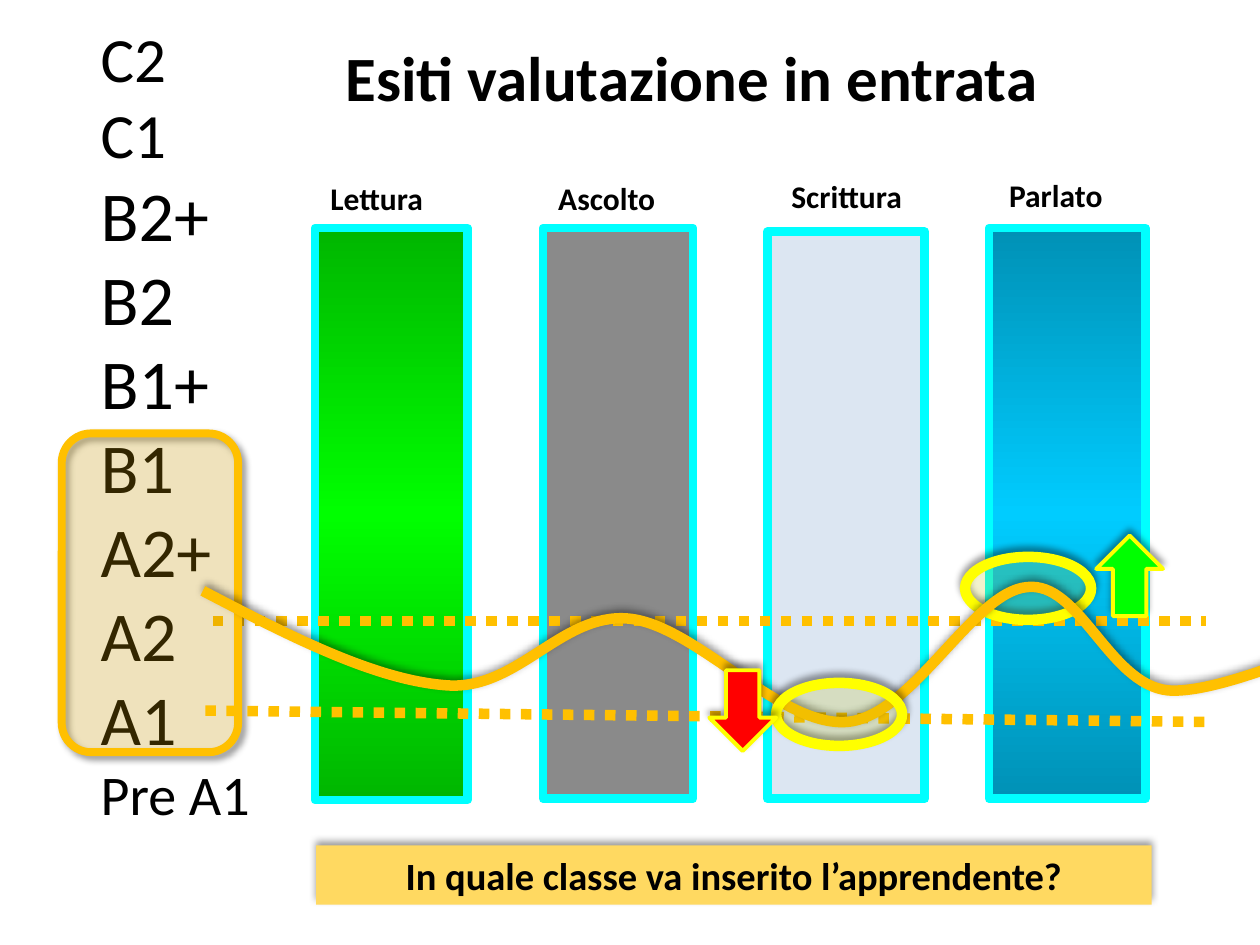
"""Build the slide that compares entry assessment results across four skills."""
from dataclasses import dataclass
from typing import Optional

from lxml import etree
from pptx import Presentation
from pptx import util as u
from pptx.dml.color import RGBColor
from pptx.enum import dml, shapes, text
from pptx.oxml import parse_xml
from pptx.oxml.ns import nsdecls, qn

PX = 9144
SHAPE = shapes.MSO_SHAPE


@dataclass(frozen=True)
class Theme:
    font: str = "Calibri"
    ink: str = "000000"
    cyan: str = "00FFFF"
    amber: str = "FFC000"
    yellow: str = "FFFF00"
    green: str = "00FF00"
    red: str = "FF0000"
    sky: str = "00CCFF"
    pale: str = "DCE6F2"
    sand: str = "FFD961"
    title_size: int = 36
    label_size: int = 18
    question_size: int = 22


@dataclass(frozen=True)
class Box:
    left: int
    top: int
    width: int
    height: int

    def emu(self) -> list[int]:
        return [value * PX for value in (self.left, self.top, self.width, self.height)]


@dataclass(frozen=True)
class Figure:
    kind: int
    box: Box
    fill: str
    line: Optional[str] = None
    weight: float = 0
    opacity: int = 100
    gradient: bool = False
    shadow_angle: Optional[int] = None
    rotation: int = 0


@dataclass(frozen=True)
class Label:
    box: Box
    lines: tuple[tuple[str, int], ...]
    bold: bool = True
    centred: bool = True
    wrap: bool = False


THEME = Theme()
TITLE = Label(Box(216, 26, 666, 71), (("Esiti valutazione in entrata", THEME.title_size),), wrap=True)
QUESTION = Label(Box(251, 671, 663, 47),
                 (("In quale classe va inserito l’apprendente?", THEME.question_size),), wrap=True)
LEVELS = Label(
    Box(70, 11, 161, 670),
    (("C2", 36), ("C1", 36),
     *((level, 40) for level in ("B2+", "B2", "B1+", "B1", "A2+", "A2", "A1")),
     ("Pre A1", 32)),
    bold=False, centred=False)
SKILLS = [
    Label(box, ((name, THEME.label_size),))
    for name, box in (("Ascolto", Box(425, 137, 113, 40)), ("Lettura", Box(246, 137, 106, 40)),
                      ("Parlato", Box(785, 135, 106, 40)), ("Scrittura", Box(610, 136, 124, 40)))]
COLUMNS = [
    Figure(SHAPE.RECTANGLE, Box(250, 181, 121, 454), THEME.green, THEME.cyan, 5, gradient=True),
    Figure(SHAPE.RECTANGLE, Box(785, 181, 124, 453), THEME.sky, THEME.cyan, 5, gradient=True),
    Figure(SHAPE.RECTANGLE, Box(609, 184, 125, 450), THEME.pale, THEME.cyan, 5),
    Figure(SHAPE.RECTANGLE, Box(431, 181, 119, 453), THEME.ink, THEME.cyan, 5, opacity=46)]
CLASS_RANGE = Figure(SHAPE.ROUNDED_RECTANGLE, Box(49, 344, 140, 253), THEME.amber, THEME.amber, 4.5,
                     opacity=20, shadow_angle=45)
HIGH_RING, LOW_RING = [
    Figure(SHAPE.OVAL, Box(left, top, 100, 50), THEME.yellow, THEME.yellow, 6,
           opacity=15, shadow_angle=270) for left, top in ((766, 442), (616, 542))]
UP_ARROW, DOWN_ARROW = [
    Figure(SHAPE.DOWN_ARROW, Box(left, top, 53, 64), colour, THEME.yellow, 2.25,
           shadow_angle=270, rotation=rotation)
    for left, top, colour, rotation in ((870, 425, THEME.green, 180), (563, 532, THEME.red, 0))]
BAND = Figure(SHAPE.RECTANGLE, QUESTION.box, THEME.sand, shadow_angle=270)
UPPER_LIMIT = (169, 493, 957, 493)
LOWER_LIMIT = (163, 564, 957, 573)
CURVE_START = (161, 469)
CURVE = [
    ((230, 505), (298, 540), (355, 544)), ((411, 548), (446, 486), (499, 491)),
    ((552, 496), (619, 577), (672, 573)), ((724, 569), (772, 470), (815, 466)),
    ((857, 461), (880, 543), (927, 548)), ((975, 552), (1098, 492), (1098, 492))]


def set_shadow(shape, angle: Optional[int]) -> None:
    """Replace the inherited shadow with none or with a soft black one."""
    shape.shadow.inherit = False
    if angle is not None:
        effects = shape._element.spPr.find(qn("a:effectLst"))
        effects.append(parse_xml(
            f'<a:outerShdw {nsdecls("a")} blurRad="{u.Pt(4)}" dist="{u.Pt(3)}" '
            f'dir="{angle * 60000}" algn="ctr" rotWithShape="0">'
            f'<a:srgbClr val="{THEME.ink}"><a:alpha val="40000"/></a:srgbClr></a:outerShdw>'))


def set_gradient(shape, colour: str) -> None:
    """Fill a shape from dark to full colour and back to dark, downwards."""
    dark = f'<a:srgbClr val="{colour}"><a:shade val="46275"/></a:srgbClr>'
    stops = ((0, dark), (50000, f'<a:srgbClr val="{colour}"/>'), (100000, dark))
    marks = "".join(f'<a:gs pos="{position}">{tone}</a:gs>' for position, tone in stops)
    properties = shape._element.spPr
    properties.find(qn("a:prstGeom")).addnext(parse_xml(
        f'<a:gradFill {nsdecls("a")} rotWithShape="1"><a:gsLst>{marks}</a:gsLst>'
        '<a:lin ang="5400000" scaled="1"/></a:gradFill>'))


def set_line(line, colour: str, weight: float) -> None:
    """Give a line its colour and weight."""
    line.color.rgb = RGBColor.from_string(colour)
    line.width = u.Pt(weight)


def draw_figure(slide, figure: Figure):
    """Draw a preset shape and return it."""
    shape = slide.shapes.add_shape(figure.kind, *figure.box.emu())
    shape.rotation = figure.rotation
    if figure.gradient:
        set_gradient(shape, figure.fill)
    else:
        shape.fill.solid()
        shape.fill.fore_color.rgb = RGBColor.from_string(figure.fill)
    if figure.opacity < 100:
        colour = shape._element.spPr.find(qn("a:solidFill"))[0]
        etree.SubElement(colour, qn("a:alpha"), val=str(figure.opacity * 1000))
    if figure.line:
        set_line(shape.line, figure.line, figure.weight)
    else:
        shape.line.fill.background()
    set_shadow(shape, figure.shadow_angle)
    return shape


def write_label(shape, label: Label) -> None:
    """Write the lines of a label into a shape."""
    frame = shape.text_frame
    frame.text = "\n".join(words for words, _ in label.lines)
    frame.word_wrap = label.wrap
    frame.auto_size = text.MSO_AUTO_SIZE.SHAPE_TO_FIT_TEXT
    frame.vertical_anchor = text.MSO_ANCHOR.TOP
    for paragraph, (_, size) in zip(frame.paragraphs, label.lines):
        paragraph.alignment = text.PP_ALIGN.CENTER if label.centred else text.PP_ALIGN.LEFT
        font = paragraph.runs[0].font
        font.name, font.size, font.bold = THEME.font, u.Pt(size), label.bold
        font.color.rgb = RGBColor.from_string(THEME.ink)


def draw_label(slide, label: Label) -> None:
    """Draw a label in its own text box."""
    write_label(slide.shapes.add_textbox(*label.box.emu()), label)


def draw_limit(slide, ends: tuple[int, int, int, int]) -> None:
    """Draw a dotted level limit."""
    connector = slide.shapes.add_connector(
        shapes.MSO_CONNECTOR.STRAIGHT, *(value * PX for value in ends))
    set_line(connector.line, THEME.amber, 6)
    connector.line.dash_style = dml.MSO_LINE.ROUND_DOT
    etree.SubElement(connector._element.spPr, qn("a:effectLst"))


def draw_curve(slide) -> None:
    """Draw the learner profile as a chain of cubic curves."""
    builder = slide.shapes.build_freeform(*CURVE_START, scale=PX)
    builder.add_line_segments([segment[-1] for segment in CURVE], close=False)
    shape = builder.convert_to_shape()
    outline = next(shape._element.iter(qn("a:path")))
    left = min(CURVE_START[0], *(segment[-1][0] for segment in CURVE))
    top = min(CURVE_START[1], *(segment[-1][1] for segment in CURVE))
    unit = int(outline.get("w")) / (CURVE[-1][-1][0] - left)
    for straight, segment in zip(outline.findall(qn("a:lnTo")), CURVE):
        bend = etree.Element(qn("a:cubicBezTo"))
        for x, y in segment:
            etree.SubElement(bend, qn("a:pt"), x=str(round((x - left) * unit)),
                             y=str(round((y - top) * unit)))
        outline.replace(straight, bend)
    shape.fill.background()
    set_line(shape.line, THEME.amber, 6)
    set_shadow(shape, 270)


def main() -> None:
    """Build and save the presentation."""
    presentation = Presentation()
    presentation.slide_width, presentation.slide_height = 1000 * PX, 750 * PX
    slide = presentation.slides.add_slide(presentation.slide_layouts[6])
    for column in COLUMNS:
        draw_figure(slide, column)
    for label in (LEVELS, *SKILLS):
        draw_label(slide, label)
    draw_limit(slide, UPPER_LIMIT)
    for figure in (CLASS_RANGE, HIGH_RING):
        draw_figure(slide, figure)
    write_label(draw_figure(slide, BAND), QUESTION)
    draw_limit(slide, LOWER_LIMIT)
    draw_curve(slide)
    for figure in (LOW_RING, UP_ARROW, DOWN_ARROW):
        draw_figure(slide, figure)
    draw_label(slide, TITLE)
    presentation.save("out.pptx")


if __name__ == "__main__":
    main()
